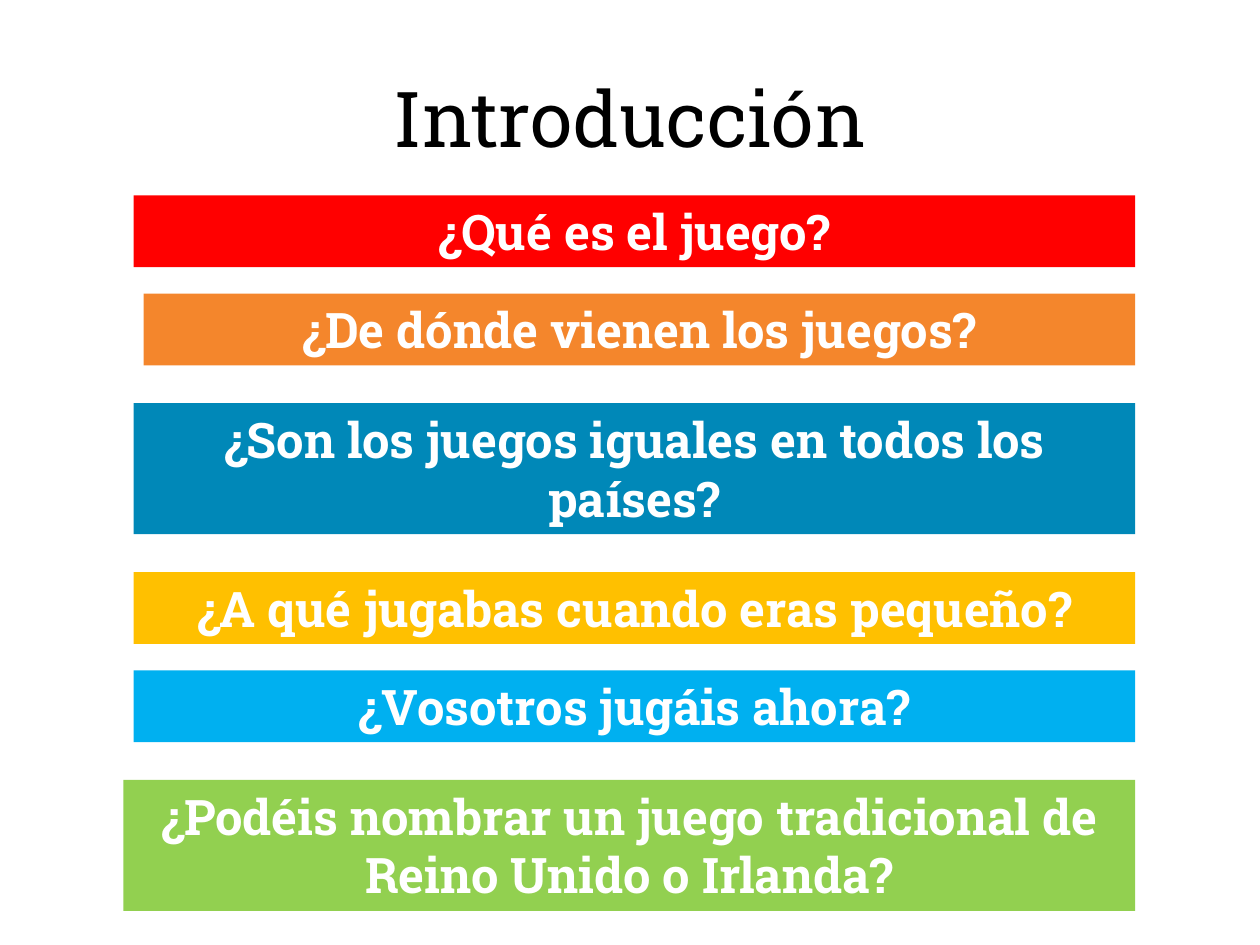
"""Build the introduction slide with its six coloured question bars."""
from pptx import Presentation
from pptx.dml.color import RGBColor
from pptx.enum.shapes import MSO_SHAPE as Shape
from pptx.enum.text import MSO_ANCHOR as Anchor, MSO_AUTO_SIZE as AutoSize, PP_ALIGN as Align
from pptx.util import Inches, Pt

FONT = "Roboto Slab"
BLACK = RGBColor(0x00, 0x00, 0x00)
WHITE = RGBColor(0xFF, 0xFF, 0xFF)
RED = RGBColor(0xFF, 0x00, 0x00)
ORANGE = RGBColor(0xF4, 0x86, 0x2C)
BLUE = RGBColor(0x00, 0x88, 0xB8)
YELLOW = RGBColor(0xFF, 0xC0, 0x00)
SKY = RGBColor(0x00, 0xB0, 0xF0)
GREEN = RGBColor(0x92, 0xD0, 0x50)

BAR_RIGHT = 9.01
ONE_LINE = 0.57
TWO_LINES = 1.04
QUESTIONS = [
    ("¿Qué es el juego?", 1.06, 1.55, ONE_LINE, RED),
    ("¿De dónde vienen los juegos?", 1.14, 2.33, ONE_LINE, ORANGE),
    ("¿Son los juegos iguales en todos los países?", 1.06, 3.2, TWO_LINES, BLUE),
    ("¿A qué jugabas cuando eras pequeño?", 1.06, 4.54, ONE_LINE, YELLOW),
    ("¿Vosotros jugáis ahora?", 1.06, 5.32, ONE_LINE, SKY),
    ("¿Podéis nombrar un juego tradicional de Reino Unido o Irlanda?",
     0.98, 6.19, TWO_LINES, GREEN),
]


def write_text(shape, text, *, size, color, bold=False, anchor=Anchor.TOP, fit=AutoSize.NONE):
    frame = shape.text_frame
    frame.word_wrap = True
    frame.auto_size = fit
    frame.vertical_anchor = anchor
    para = frame.paragraphs[0]
    para.alignment = Align.CENTER
    span = para.add_run()
    span.text = text
    span.font.name = FONT
    span.font.size = Pt(size)
    span.font.bold = bold
    span.font.color.rgb = color


def add_title(page, text):
    box = page.shapes.add_textbox(Inches(0.5), Inches(0.3), Inches(9), Inches(1.25))
    write_text(box, text, size=44, color=BLACK, anchor=Anchor.MIDDLE)


def add_question(page, text, left, top, height, color):
    bar = page.shapes.add_shape(Shape.RECTANGLE, Inches(left), Inches(top),
                                Inches(BAR_RIGHT - left), Inches(height))
    bar.shadow.inherit = False
    bar.fill.solid()
    bar.fill.fore_color.rgb = color
    bar.line.fill.background()
    write_text(bar, text, size=28, color=WHITE, bold=True, fit=AutoSize.SHAPE_TO_FIT_TEXT)


def main():
    deck = Presentation()
    deck.slide_width, deck.slide_height = Inches(10), Inches(7.5)
    page = deck.slides.add_slide(deck.slide_layouts[6])
    add_title(page, "Introducción")
    for question in QUESTIONS:
        add_question(page, *question)
    deck.save("out.pptx")


if __name__ == "__main__":
    main()
